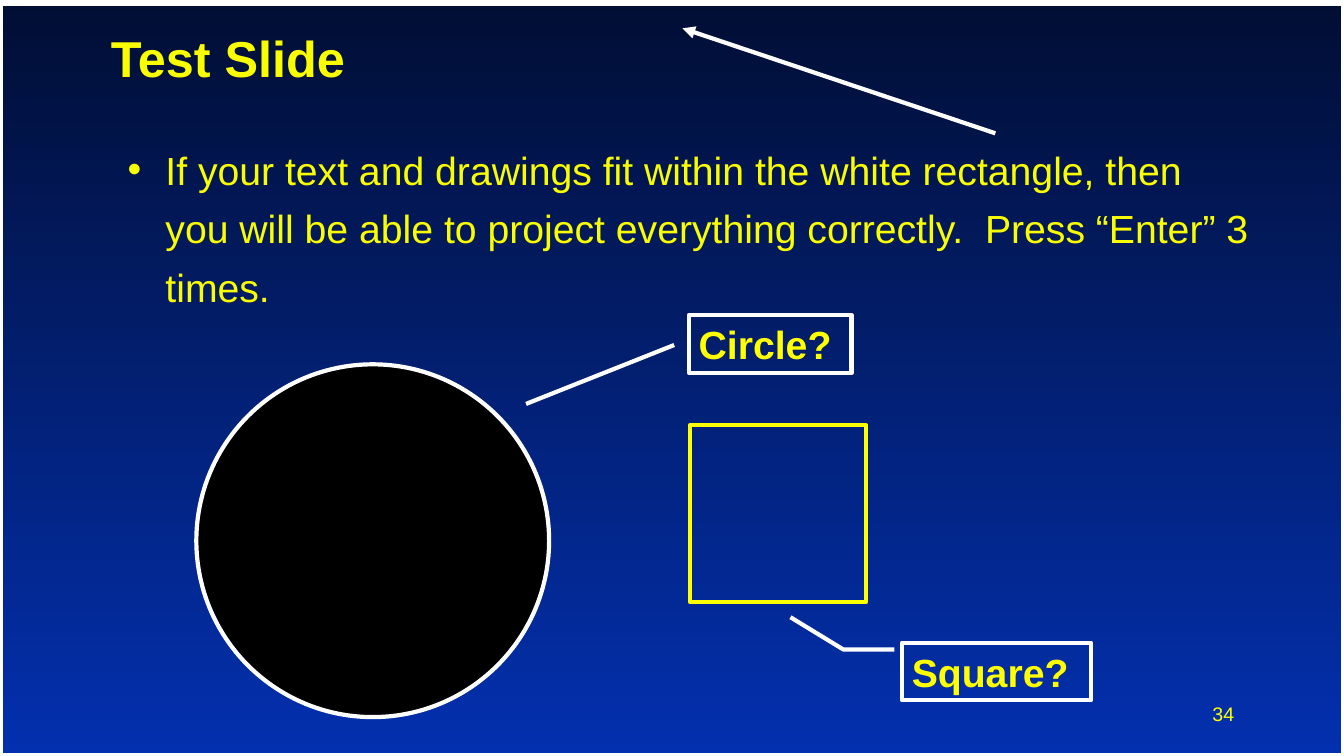
from collections import namedtuple
from dataclasses import dataclass
from lxml.etree import SubElement
from pptx import Presentation
from pptx.dml.color import RGBColor
from pptx.enum.shapes import MSO_CONNECTOR, MSO_SHAPE
from pptx.enum.text import MSO_ANCHOR, MSO_AUTO_SIZE, PP_ALIGN
from pptx.oxml.ns import qn
from pptx.util import Pt

PX = 9525
Box = namedtuple("Box", "x y w h")


@dataclass(frozen=True)
class Theme:
    """Hold the colours, font and type sizes of the slide."""
    top: str = "010E34"
    base: str = "0330AF"
    text: str = "FAFD00"
    mark: str = "FFFF00"
    line: str = "FFFFFF"
    disc: str = "000000"
    font: str = "Arial"
    head: int = 36
    body: int = 28
    small: int = 14
    thin: int = 3
    thick: float = 4.5


LOOK = Theme()


def color(code):
    """Turn a hex code into a colour."""
    return RGBColor.from_string(code)


def scale(*nums):
    """Turn px lengths into EMU."""
    return [num * PX for num in nums]


def apply(item, **values):
    """Set each named value on an item."""
    for name, value in values.items():
        setattr(item, name, value)


def write(shape, text, size, tint, bold=False, align=PP_ALIGN.LEFT, **frame):
    """Write one formatted paragraph and return it."""
    apply(shape.text_frame, **{"word_wrap": True, "auto_size": MSO_AUTO_SIZE.NONE, **frame})
    para = shape.text_frame.paragraphs[0]
    para.alignment = align
    run = para.add_run()
    run.text = text
    apply(run.font, name=LOOK.font, size=Pt(size), bold=bold)
    run.font.color.rgb = color(tint)
    return para


def place(shape, box):
    """Move a placeholder into a box."""
    apply(shape, **dict(zip(("left", "top", "width", "height"), scale(*box))))


def draw(shapes, kind, box, line, width=LOOK.thin, fill=None):
    """Draw one outlined preset shape."""
    shape = shapes.add_shape(kind, *scale(*box))
    shape.shadow.inherit = False
    shape.line.color.rgb = color(line)
    shape.line.width = Pt(width)
    if fill:
        shape.fill.solid()
        shape.fill.fore_color.rgb = color(fill)
    else:
        shape.fill.background()
    return shape


def label(shapes, kind, box, text, bends):
    """Draw a callout whose leader follows the given bends."""
    note = draw(shapes, kind, box, LOOK.line)
    for spot, bend in enumerate(bends):
        note.adjustments[spot] = bend
    write(note, text, LOOK.body, LOOK.mark, True, vertical_anchor=MSO_ANCHOR.MIDDLE)


def backdrop(slide):
    """Fill the background from dark to bright blue."""
    fill = slide.background.fill
    fill.gradient()
    fill.gradient_angle = 270
    for stop, tint in zip(fill.gradient_stops, (LOOK.top, LOOK.base)):
        stop.color.rgb = color(tint)


def heading(slide, box):
    """Place the slide title."""
    place(slide.shapes.title, box)
    write(slide.shapes.title, "Test Slide", LOOK.head, LOOK.text, True,
          vertical_anchor=MSO_ANCHOR.BOTTOM)


def bullet(slide, box):
    """Place the bulleted instruction."""
    body = slide.placeholders[1]
    place(body, box)
    para = write(body, "If your text and drawings fit within the white rectangle, then "
                 "you will be able to project everything correctly.  Press “Enter” 3 times.",
                 LOOK.body, LOOK.text, vertical_anchor=MSO_ANCHOR.TOP)
    para.line_spacing = 1.25
    props = para._p.get_or_add_pPr()
    props.set("marL", str(36 * PX))
    props.set("indent", str(-36 * PX))
    tint = SubElement(props, qn("a:buClr"))
    SubElement(tint, qn("a:srgbClr"), val=LOOK.text)
    SubElement(props, qn("a:buFont"), typeface=LOOK.font)
    SubElement(props, qn("a:buChar"), char="•")


def border(slide, box):
    """Draw the white frame and the arrow that points to it."""
    group = slide.shapes.add_group_shape().shapes
    draw(group, MSO_SHAPE.RECTANGLE, box, LOOK.line, LOOK.thick)
    ends = scale(box.x + 948, box.y + 124, box.x + 650, box.y + 24)
    arrow = group.add_connector(MSO_CONNECTOR.STRAIGHT, *ends)
    arrow.line.color.rgb = color(LOOK.line)
    arrow.line.width = Pt(LOOK.thin)
    SubElement(arrow.line._get_or_add_ln(), qn("a:tailEnd"), type="triangle")
    SubElement(arrow._element.spPr, qn("a:effectLst"))


def circle(slide, box):
    """Draw the black circle with its callout."""
    group = slide.shapes.add_group_shape().shapes
    draw(group, MSO_SHAPE.OVAL, box, LOOK.line, fill=LOOK.disc)
    label(group, MSO_SHAPE.LINE_CALLOUT_1, Box(box.x + 469, box.y - 47, 155, 55),
          "Circle?", (0.52, -0.09, 1.54, -1))


def square(slide, box):
    """Draw the open square with its callout."""
    group = slide.shapes.add_group_shape().shapes
    draw(group, MSO_SHAPE.RECTANGLE, box, LOOK.mark)
    label(group, MSO_SHAPE.LINE_CALLOUT_2, Box(box.x + 202, box.y + 207, 180, 55),
          "Square?", (0.12, -0.04, 0.12, -0.31, -0.44, -0.59))


def number(slide, box):
    """Place the slide number."""
    field = slide.shapes.add_textbox(*scale(*box))
    write(field, "34", LOOK.small, LOOK.mark, align=PP_ALIGN.RIGHT,
          vertical_anchor=MSO_ANCHOR.MIDDLE)


def main():
    """Build and save the slide."""
    deck = Presentation()
    apply(deck, slide_width=1280 * PX, slide_height=720 * PX)
    slide = deck.slides.add_slide(deck.slide_layouts[1])
    backdrop(slide)
    heading(slide, Box(96, 24, 1088, 64))
    bullet(slide, Box(112, 123, 1088, 200))
    border(slide, Box(0, 3, 1280, 717))
    circle(slide, Box(187, 347, 336, 336))
    square(slide, Box(657, 405, 168, 168))
    number(slide, Box(918, 656, 267, 48))
    deck.save("out.pptx")


if __name__ == "__main__":
    main()
